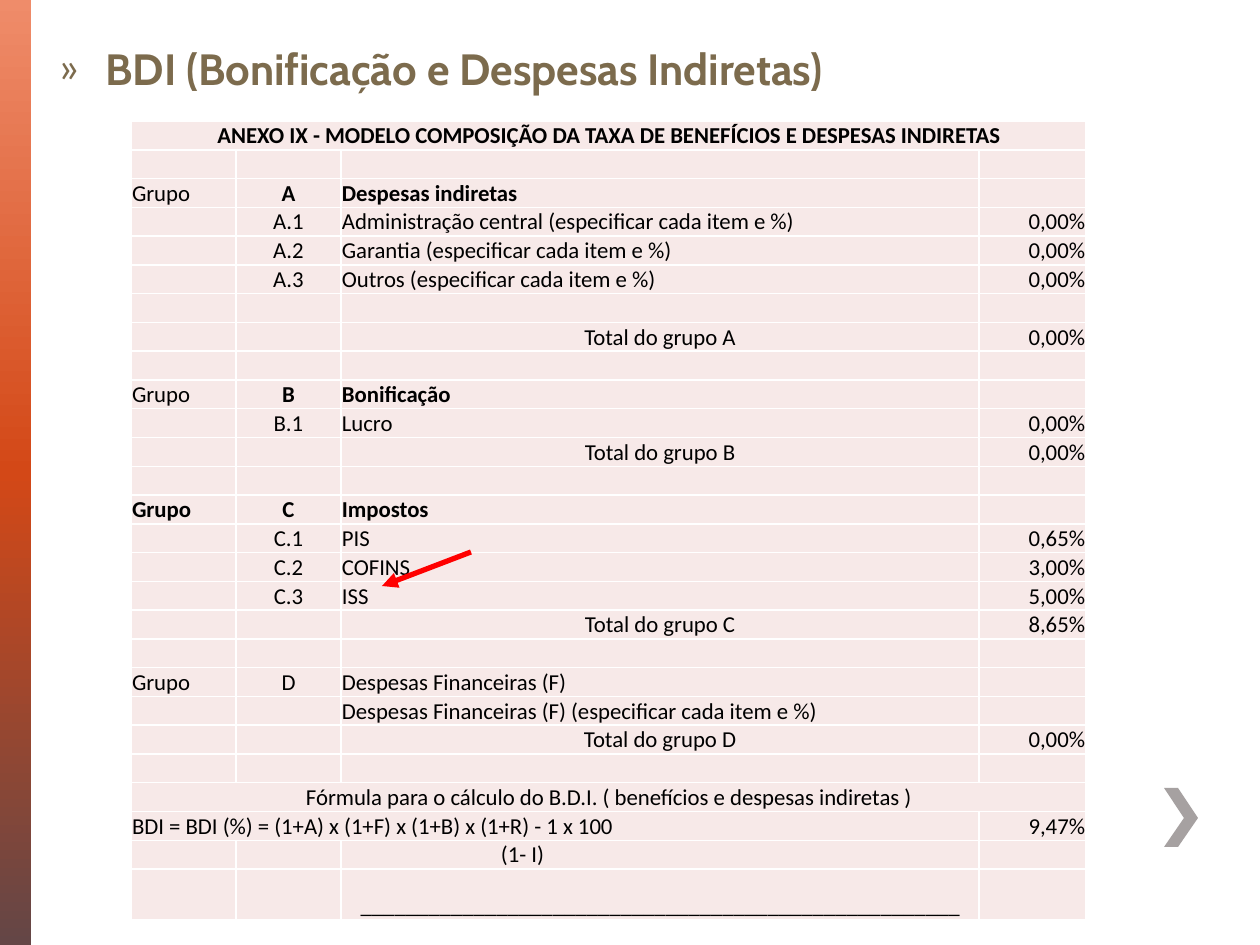
"""Build the BDI slide: title, rate table, side bar, chevron and arrow."""
from copy import deepcopy

from lxml import etree
from pptx import Presentation
from pptx.dml.color import RGBColor
from pptx.enum.shapes import MSO_CONNECTOR, MSO_SHAPE
from pptx.enum.text import MSO_ANCHOR, MSO_AUTO_SIZE, PP_ALIGN
from pptx.oxml.ns import qn
from pptx.util import Pt

PX = 914400 / 126
LEFT, MID, RIGHT, FULL = PP_ALIGN.LEFT, PP_ALIGN.CENTER, PP_ALIGN.RIGHT, PP_ALIGN.JUSTIFY
TOP, CENTER, BOTTOM = MSO_ANCHOR.TOP, MSO_ANCHOR.MIDDLE, MSO_ANCHOR.BOTTOM

TITLE = "BDI (Bonificação e Despesas Indiretas)"
BLANK = ("", "", "", "")
ROWS = [
    ("ANEXO IX - MODELO COMPOSIÇÃO DA TAXA DE BENEFÍCIOS E DESPESAS INDIRETAS", "", "", ""),
    BLANK,
    ("Grupo", "A", "Despesas indiretas", ""),
    ("", "A.1", "Administração central (especificar cada item e %)", "0,00%"),
    ("", "A.2", "Garantia (especificar cada item e %)", "0,00%"),
    ("", "A.3", "Outros (especificar cada item e %)", "0,00%"),
    BLANK,
    ("", "", "Total do grupo A", "0,00%"),
    BLANK,
    ("Grupo", "B", "Bonificação", ""),
    ("", "B.1", "Lucro", "0,00%"),
    ("", "", "Total do grupo B", "0,00%"),
    BLANK,
    ("Grupo", "C", "Impostos", ""),
    ("", "C.1", "PIS", "0,65%"),
    ("", "C.2", "COFINS", "3,00%"),
    ("", "C.3", "ISS", "5,00%"),
    ("", "", "Total do grupo C", "8,65%"),
    BLANK,
    ("Grupo", "D", "Despesas Financeiras (F)", ""),
    ("", "", "Despesas Financeiras (F) (especificar cada item e %)", ""),
    ("", "", "Total do grupo D", "0,00%"),
    BLANK,
    ("Fórmula para o cálculo do B.D.I. ( benefícios e despesas indiretas )", "", "", ""),
    ("BDI = BDI (%) = (1+A) x (1+F) x (1+B) x (1+R) - 1 x 100", "", "", "9,47%"),
    ("", "", "(1- I)", ""),
    ("", "", "_" * 53, ""),
]
BOLD = {0: (0,), 2: (1, 2), 9: (1, 2), 13: (0, 1, 2)}
SPANS = {0: 3, 23: 3, 24: 2}
INDENT = {(25, 2): 159}
COLS = (105, 105, 638, 107)
ALIGN = (LEFT, MID, LEFT, RIGHT)
BODY, LAST = 749, 51
BAR = [(0, "EF8C6A"), (0.5, "D34817"), (1, "644646")]
CHEVRON = [(1178, 788), (1164, 788), (1184, 818), (1164, 847), (1178, 847), (1198, 818)]


def px(num):
    return round(num * PX)


def rgb(code):
    return RGBColor.from_string(code)


def child(node, tag, **attrs):
    return etree.SubElement(node, qn(tag), {key: str(val) for key, val in attrs.items()})


def style(font, size, color, bold, face):
    font.size, font.bold, font.name = Pt(size), bold, face
    font.color.rgb = rgb(color)


def add_title(slide):
    shape = slide.shapes.title
    shape.left, shape.top, shape.width, shape.height = map(px, (45, 35, 1171, 102))
    frame = shape.text_frame
    frame.text = TITLE
    frame.word_wrap, frame.auto_size = True, MSO_AUTO_SIZE.NONE
    frame.vertical_anchor = TOP
    para = frame.paragraphs[0]
    para.alignment, para.space_before = FULL, Pt(5)
    style(para.runs[0].font, 25, "7C6B4D", True, "Cabin")
    props = para._p.get_or_add_pPr()
    props.set("marL", str(px(48)))
    props.set("indent", str(px(-48)))
    child(props, "a:buFont", typeface="Calibri")
    child(props, "a:buChar", char="»")


def add_bar(slide):
    bar = slide.shapes.add_shape(MSO_SHAPE.RECTANGLE, 0, 0, px(31), px(945))
    bar.shadow.inherit = False
    bar.line.fill.background()
    bar.fill.gradient()
    bar.fill.gradient_angle = 270
    stop = bar._element.xpath(".//a:gs")[0]
    stop.addnext(deepcopy(stop))
    for stop, (spot, color) in zip(bar.fill.gradient_stops, BAR):
        stop.position, stop.color.rgb = spot, rgb(color)


def add_chevron(slide):
    build = slide.shapes.build_freeform(*CHEVRON[0], scale=PX)
    build.add_line_segments(CHEVRON[1:], close=True)
    shape = build.convert_to_shape()
    shape.shadow.inherit = False
    shape.fill.solid()
    shape.fill.fore_color.rgb = rgb("A6A1A1")
    shape.line.fill.background()


def fill_cell(cell, row, col):
    text = ROWS[row][col]
    last = row == len(ROWS) - 1
    cell.margin_left = cell.margin_right = cell.margin_top = px(1)
    cell.margin_bottom = 0
    cell.vertical_anchor = BOTTOM if last and text else CENTER
    cell.text = text
    para = cell.text_frame.paragraphs[0]
    middle = text.startswith(("Total", "_")) or SPANS.get(row) == 3
    para.alignment = MID if middle else ALIGN[col]
    if (row, col) in INDENT:
        para._p.get_or_add_pPr().set("marL", str(px(INDENT[row, col])))
    for run in para.runs:
        style(run.font, 13, "000000", col in BOLD.get(row, ()), "Calibri")
    if not text:
        child(para._p, "a:endParaRPr", sz=1300)
        child(para._p[-1], "a:latin", typeface="Calibri")
    props = cell._tc.get_or_add_tcPr()
    for side in ("a:lnL", "a:lnR", "a:lnT", "a:lnB"):
        line = child(props, side, w=Pt(1))
        child(child(line, "a:solidFill"), "a:srgbClr", val="FFFFFF")
    cell.fill.solid()
    cell.fill.fore_color.rgb = rgb("F7E9E8")


def add_rates(slide):
    count = len(ROWS)
    frame = slide.shapes.add_table(
        count, len(COLS), px(131), px(121), px(sum(COLS)), px(BODY + LAST))
    table = frame.table
    table.first_row = table.horz_banding = False
    for col, width in enumerate(COLS):
        table.columns[col].width = px(width)
    for row in range(count):
        table.rows[row].height = px(LAST if row == count - 1 else BODY / (count - 1))
        for col in range(len(COLS)):
            fill_cell(table.cell(row, col), row, col)
    for row, end in SPANS.items():
        table.cell(row, 0).merge(table.cell(row, end))


def add_arrow(slide):
    arrow = slide.shapes.add_connector(
        MSO_CONNECTOR.STRAIGHT, px(471), px(552), px(382), px(586))
    arrow.line.color.rgb = rgb("FF0000")
    arrow.line.width = Pt(3)
    child(arrow.line._get_or_add_ln(), "a:tailEnd", type="triangle")
    child(arrow._element.spPr, "a:effectLst")


def main():
    deck = Presentation()
    deck.slide_width, deck.slide_height = px(1260), px(945)
    slide = deck.slides.add_slide(deck.slide_layouts[5])
    add_bar(slide)
    add_chevron(slide)
    add_title(slide)
    add_rates(slide)
    add_arrow(slide)
    deck.save("out.pptx")


if __name__ == "__main__":
    main()
